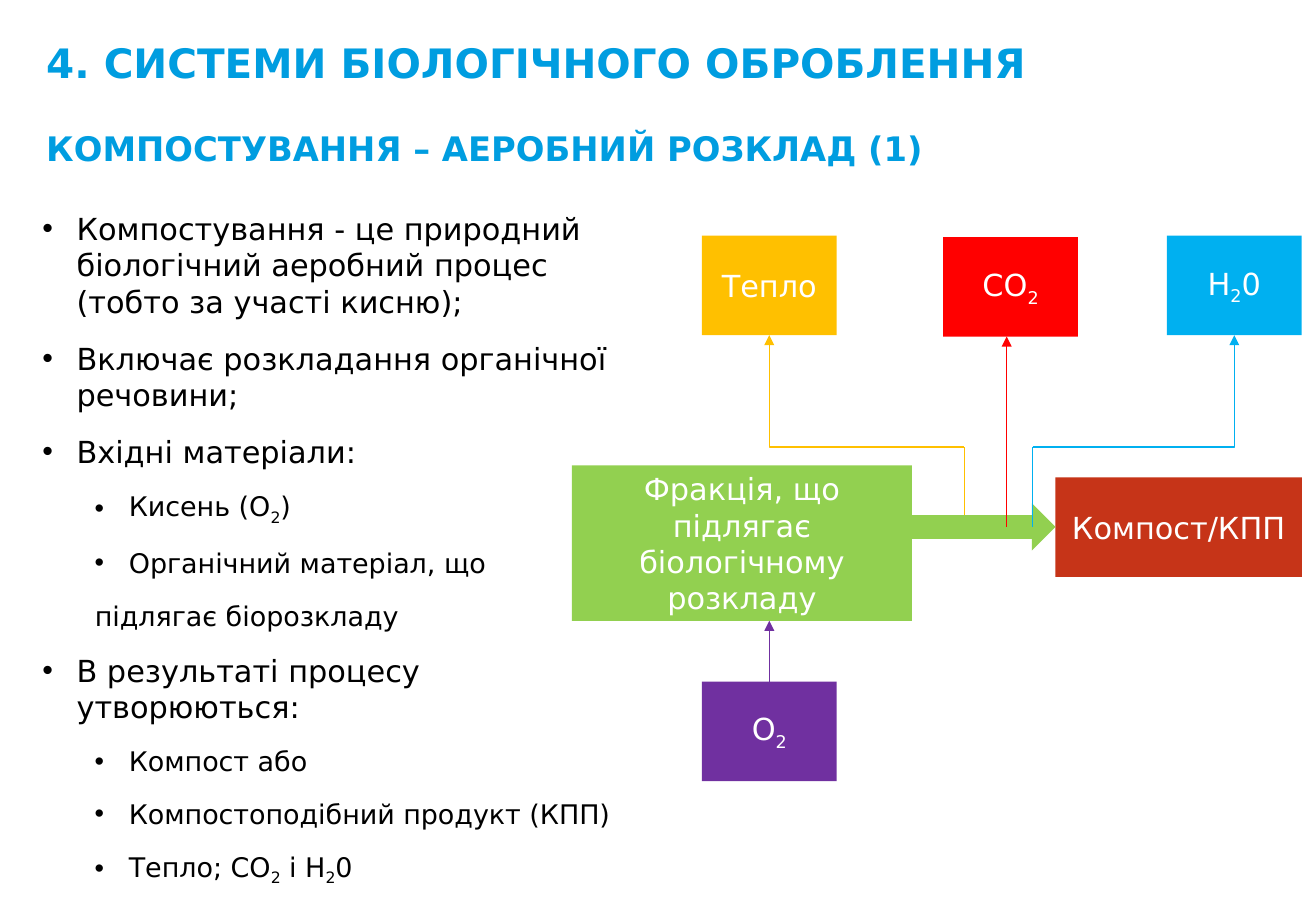
from lxml.etree import SubElement
from pptx import Presentation
from pptx.dml.color import RGBColor
from pptx.enum.shapes import MSO_CONNECTOR, MSO_SHAPE
from pptx.enum.text import MSO_ANCHOR, PP_ALIGN
from pptx.oxml.ns import qn
from pptx.util import Pt

FONT = "DejaVu Sans"
COLORS = {
    "title": "009DE0", "text": "000000", "white": "FFFFFF",
    "green": "92D050", "gold": "FFC000", "purple": "7030A0",
    "red": "FF0000", "brick": "C63418", "blue": "00B0F0",
}
BOX_W, BOX_H = 80, 59
TOP = 139.7
BEND, FLOW = 265, 312.4

# level, bullet, text
BODY = [
    (0, True, "Компостування - це природний біологічний аеробний процес "
              "(тобто за участі кисню);"),
    (0, True, "Включає розкладання органічної речовини;"),
    (0, True, "Вхідні матеріали:"),
    (1, True, "Кисень (O_2)"),
    (1, True, "Органічний матеріал, що"),
    (1, False, "підлягає біорозкладу"),
    (0, True, "В результаті процесу утворюються:"),
    (1, True, "Компост або"),
    (1, True, "Компостоподібний продукт (КПП)"),
    (1, True, "Тепло; CO_2 і H_20"),
]


def color(name):
    return RGBColor.from_string(COLORS[name])


def apply(target, values):
    for key, value in values.items():
        setattr(target, key, value)


def write(para, text, size, tint, bold=False):
    """Add the text as runs; the character after each underscore is a subscript."""
    head, *tails = text.split("_")
    parts = [(head, False)]
    for tail in tails:
        parts += [(tail[:1], True), (tail[1:], False)]
    for part, sub in parts:
        if not part:
            continue
        run = para.add_run()
        run.text = part
        apply(run.font, {"name": FONT, "size": Pt(size), "bold": bold})
        run.font.color.rgb = color(tint)
        if sub:
            run._r.get_or_add_rPr().set("baseline", "-25000")


def add_frame(slide, place, left, anchor):
    frame = slide.shapes.add_textbox(*map(Pt, place)).text_frame
    apply(frame, {
        "word_wrap": True, "vertical_anchor": anchor, "margin_left": Pt(left),
        "margin_top": 0, "margin_right": 0, "margin_bottom": 0,
    })
    return frame


def add_title(slide):
    frame = add_frame(slide, (27.4, 22.3, 740, 77.8), 0, MSO_ANCHOR.MIDDLE)
    write(frame.paragraphs[0], "4. СИСТЕМИ БІОЛОГІЧНОГО ОБРОБЛЕННЯ", 24, "title", True)
    para = frame.add_paragraph()
    para.space_before = Pt(24.5)
    write(para, "КОМПОСТУВАННЯ – АЕРОБНИЙ РОЗКЛАД (1)", 20, "title", True)


def set_bullet(para, margin, indent, mark):
    props = para._p.get_or_add_pPr()
    props.set("marL", str(Pt(margin)))
    props.set("indent", str(Pt(indent)))
    if mark:
        SubElement(props, qn("a:buFont")).set("typeface", "Arial")
        SubElement(props, qn("a:buChar")).set("char", "•")
    else:
        SubElement(props, qn("a:buNone"))


def add_body(slide):
    frame = add_frame(slide, (22.3, 124.6, 347.8, 383.8), 2.9, MSO_ANCHOR.TOP)
    for num, (level, mark, text) in enumerate(BODY):
        para = frame.add_paragraph() if num else frame.paragraphs[0]
        apply(para, {"level": level, "space_after": Pt(12)})
        hang = 20.2 if mark else 0
        set_bullet(para, level * 31 + hang, -hang, mark)
        write(para, text, 16 if level else 18, "text")


def add_block(slide, place, tint, text="", kind=MSO_SHAPE.RECTANGLE):
    block = slide.shapes.add_shape(kind, *map(Pt, place))
    block.shadow.inherit = False
    block.fill.solid()
    block.fill.fore_color.rgb = color(tint)
    block.line.fill.background()
    if text:
        frame = block.text_frame
        apply(frame, {"word_wrap": True, "vertical_anchor": MSO_ANCHOR.MIDDLE})
        frame.paragraphs[0].alignment = PP_ALIGN.CENTER
        write(frame.paragraphs[0], text, 18, "white")
    return block


def add_line(slide, start, end, tint, arrow=True, bent=False):
    kind = MSO_CONNECTOR.ELBOW if bent else MSO_CONNECTOR.STRAIGHT
    line = slide.shapes.add_connector(kind, *map(Pt, start + end))
    line.line.width = Pt(0.75)
    line.line.color.rgb = color(tint)
    props = line._element.spPr
    if bent:
        props.find(qn("a:prstGeom")).set("prst", "bentConnector2")
    if arrow:
        SubElement(props.find(qn("a:ln")), qn("a:tailEnd")).set("type", "triangle")
    SubElement(props, qn("a:effectLst"))
    return line


def add_branch(slide, foot, tip, tint):
    """Draw an arrow that rises from the flow, turns aside and goes up to a box."""
    add_line(slide, (foot, BEND), (tip, TOP + BOX_H), tint, bent=True)
    add_line(slide, (foot, FLOW), (foot, BEND), tint, arrow=False)


def add_scheme(slide):
    add_block(slide, (339, 275.8, 201.6, 92.2), "green",
              "Фракція, що підлягає біологічному розкладу")
    add_block(slide, (416, TOP, BOX_W, BOX_H), "gold", "Тепло")
    oxygen = add_block(slide, (416, 404, BOX_W, BOX_H), "purple", "O_2")
    add_block(slide, (559, 140.5, BOX_W, BOX_H), "red", "CO_2")
    add_block(slide, (625.6, 283, 146, BOX_H), "brick", "Компост/КПП")
    add_block(slide, (691.6, TOP, BOX_W, BOX_H), "blue", "H_20")

    add_branch(slide, 571.6, 456, "gold")
    add_block(slide, (540.6, 298.4, 85, 28), "green", kind=MSO_SHAPE.RIGHT_ARROW)
    add_line(slide, (596.7, FLOW), (596.7, 199.5), "red")
    add_branch(slide, 612, 731.6, "blue")
    feed = add_line(slide, (456, 404), (456, 368), "purple")
    feed.begin_connect(oxygen, 0)


def main():
    deck = Presentation()
    apply(deck, {"slide_width": Pt(780), "slide_height": Pt(540)})
    slide = deck.slides.add_slide(deck.slide_layouts[6])
    add_title(slide)
    add_body(slide)
    add_scheme(slide)
    deck.save("out.pptx")


if __name__ == "__main__":
    main()
